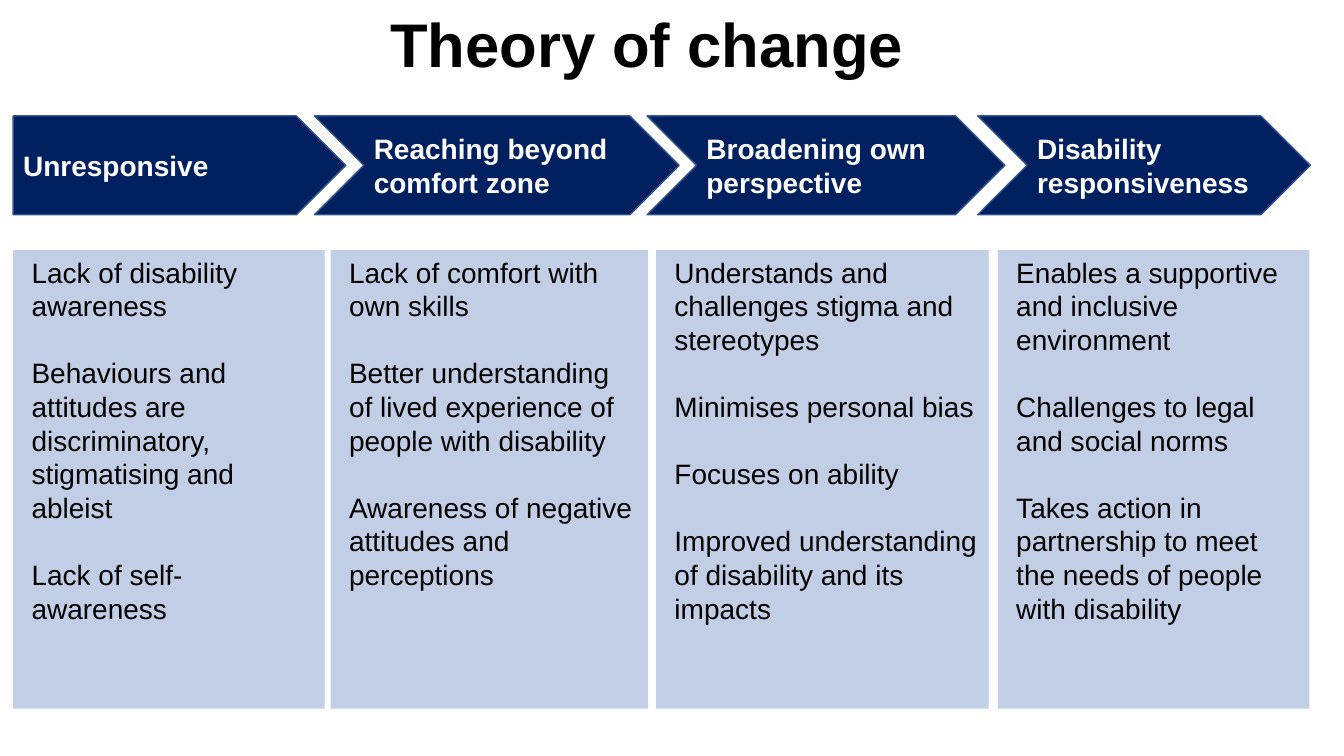
from lxml.etree import SubElement
from pptx import Presentation
from pptx.dml.color import RGBColor
from pptx.enum.shapes import MSO_SHAPE as Shape
from pptx.enum.text import MSO_ANCHOR as Anchor, PP_ALIGN as Align
from pptx.oxml.ns import qn
from pptx.util import Pt

NAVY, EDGE, BLUE, BLACK, WHITE = "002060", "325491", "003399", "000000", "FFFFFF"
ARROW_TOP, ARROW_HEIGHT = 82.8, 70.6
PANEL_TOP, PANEL_HEIGHT = 178.6, 327.6

STAGES = [
    ("Unresponsive", (9.4, 237.6), (9.4, 222.5),
     ["Lack of disability awareness",
      "Behaviours and attitudes are discriminatory, stigmatising and ableist",
      "Lack of self-awareness"]),
    ("Reaching beyond comfort zone", (224.6, 260.6), (236.2, 226.8),
     ["Lack of comfort with own skills",
      "Better understanding of lived experience of people with disability",
      "Awareness of negative attitudes and perceptions"]),
    ("Broadening own perspective", (462.2, 255.6), (468.7, 237.6),
     ["Understands and challenges stigma and stereotypes",
      "Minimises personal bias",
      "Focuses on ability",
      "Improved understanding of disability and its impacts"]),
    ("Disability responsiveness", (698.4, 237.6), (712.8, 222.5),
     ["Enables a supportive and inclusive environment",
      "Challenges to legal and social norms",
      "Takes action in partnership to meet the needs of people with disability"]),
]


def color(value):
    """Turn a hex string into a colour."""
    return RGBColor.from_string(value)


def write(paragraph, text, size=20, ink=BLACK, bold=False, align=Align.LEFT):
    """Put formatted text into a paragraph."""
    paragraph.text = text
    paragraph.alignment = align
    font = paragraph.font
    font.name, font.size, font.bold = "Arial", Pt(size), bold
    font.color.rgb = color(ink)


def add_block(slide, preset, box, fill, anchor):
    """Add a filled preset shape without line or shadow."""
    shape = slide.shapes.add_shape(preset, *map(Pt, box))
    shape.shadow.inherit = False
    shape.fill.solid()
    shape.fill.fore_color.rgb = color(fill)
    shape.line.fill.background()
    shape.text_frame.word_wrap = True
    shape.text_frame.vertical_anchor = anchor
    return shape


def add_title(slide, text, box):
    """Add the centred slide title."""
    frame = slide.shapes.add_textbox(*map(Pt, box)).text_frame
    frame.word_wrap = True
    frame.vertical_anchor = Anchor.MIDDLE
    write(frame.paragraphs[0], text, size=44, bold=True, align=Align.CENTER)
    frame.paragraphs[0].line_spacing = 0.9


def add_arrow(slide, text, preset, box):
    """Add one stage arrow with its name."""
    shape = add_block(slide, preset, box, NAVY, Anchor.MIDDLE)
    shape.line.color.rgb = color(EDGE)
    shape.line.width = Pt(1)
    write(shape.text_frame.paragraphs[0], text, ink=WHITE, bold=True)


def add_panel(slide, points, box):
    """Add the translucent panel that describes a stage."""
    shape = add_block(slide, Shape.RECTANGLE, box, BLUE, Anchor.TOP)
    fill = shape.fill._xPr.find(qn("a:solidFill"))
    SubElement(fill[0], qn("a:alpha"), val="24000")
    frame = shape.text_frame
    for index, point in enumerate(points):
        paragraph = frame.add_paragraph() if index else frame.paragraphs[0]
        paragraph._p.get_or_add_pPr().set("marL", str(Pt(6)))
        write(paragraph, point)
        paragraph.space_before = Pt(12 if index else 0)
        paragraph.space_after = Pt(12)


def main():
    """Build and save the slide."""
    presentation = Presentation()
    presentation.slide_width, presentation.slide_height = Pt(960), Pt(540)
    slide = presentation.slides.add_slide(presentation.slide_layouts[6])
    add_title(slide, "Theory of change", (48.2, 5, 828, 57.6))
    for index, (name, (left, width), _, _) in enumerate(STAGES):
        preset = Shape.CHEVRON if index else Shape.PENTAGON
        add_arrow(slide, name, preset, (left, ARROW_TOP, width, ARROW_HEIGHT))
    for _, _, (left, width), points in STAGES:
        add_panel(slide, points, (left, PANEL_TOP, width, PANEL_HEIGHT))
    presentation.save("out.pptx")


if __name__ == "__main__":
    main()
